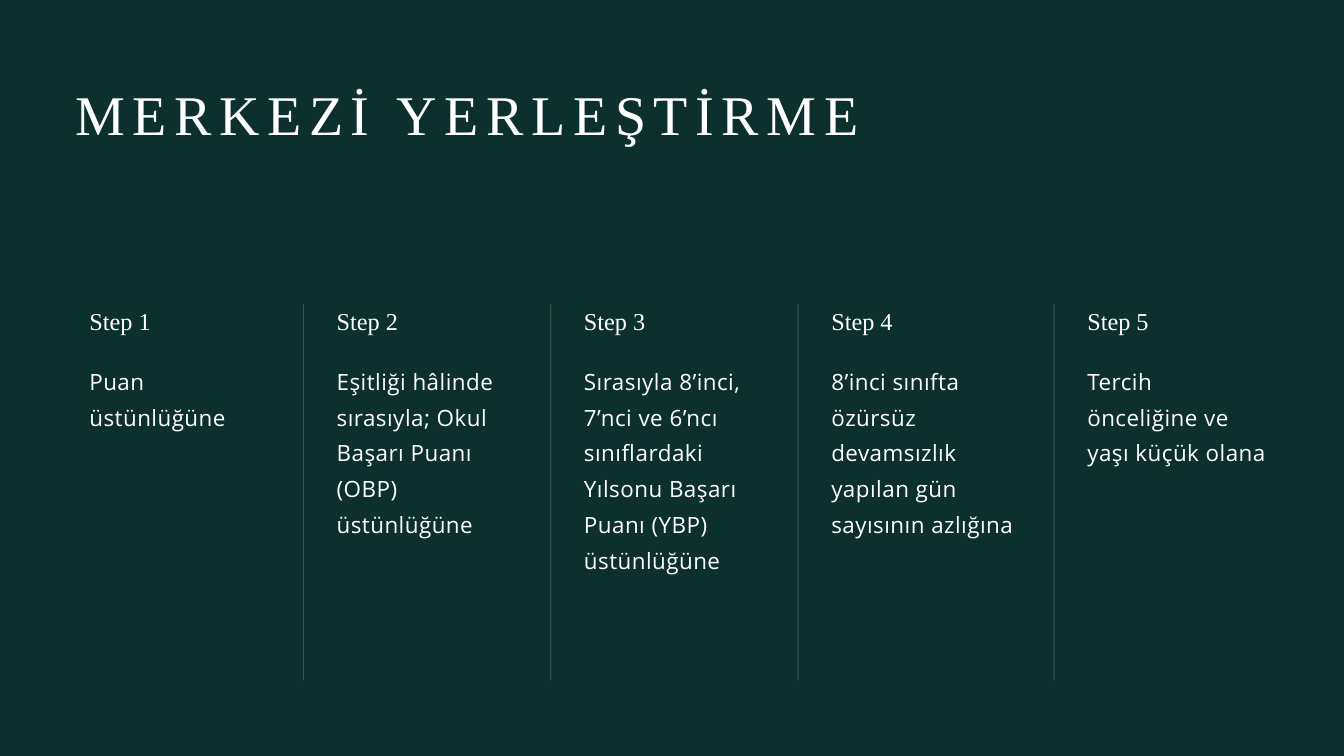
from lxml.etree import SubElement
from pptx import Presentation
from pptx.dml.color import RGBColor
from pptx.enum.shapes import MSO_CONNECTOR as Link
from pptx.enum.text import MSO_ANCHOR as Anchor, MSO_AUTO_SIZE as Fit, PP_ALIGN as Align
from pptx.oxml.ns import qn
from pptx.util import Inches, Pt

TITLE = "MERKEZİ YERLEŞTİRME"
STEPS = [
    ("Step 1", "Puan üstünlüğüne", 2.69, 2),
    ("Step 2", "Eşitliği hâlinde sırasıyla; Okul Başarı Puanı (OBP) üstünlüğüne", 2.69, 5),
    ("Step 3", "Sırasıyla 8’inci, 7’nci ve 6’ncı sınıflardaki Yılsonu Başarı Puanı (YBP) "
               "üstünlüğüne", 2.69, 6),
    ("Step 4", "8’inci sınıfta özürsüz devamsızlık yapılan gün sayısının azlığına", 2.82, 5),
    ("Step 5", "Tercih önceliğine ve yaşı küçük olana", 2.69, 3),
]
WHITE = RGBColor(0xFF, 0xFF, 0xFF)
GREEN = RGBColor(0x0C, 0x30, 0x2E)
SERIF, SANS = "Times New Roman", "Open Sans"
LEFT, GAP = 1.33, 0.99
HEAD, BODY = 4.49, 5.34
TOP, END = 4.53, 10.12
LINE = 0.53


def write(shape, text, box, font=SERIF, size=26, lead=36.4, track=0):
    shape.left, shape.top, shape.width, shape.height = map(Inches, box)
    frame = shape.text_frame
    frame.margin_left = frame.margin_right = frame.margin_top = frame.margin_bottom = 0
    frame.word_wrap = True
    frame.auto_size = Fit.NONE
    frame.vertical_anchor = Anchor.TOP
    para = frame.paragraphs[0]
    para.alignment = Align.LEFT
    para.line_spacing = Pt(lead)
    para.space_before = Pt(0)
    run = para.add_run()
    run.text = text
    run.font.name = font
    run.font.size = Pt(size)
    run.font.color.rgb = WHITE
    if track:
        run.font._element.set("spc", str(round(track * 100)))


def rule(slide, x):
    line = slide.shapes.add_connector(
        Link.STRAIGHT, Inches(x), Inches(END), Inches(x), Inches(TOP))
    line.line.width = Pt(0.75)
    line.line.color.rgb = WHITE
    tint = line._element.spPr.find(".//" + qn("a:srgbClr"))
    SubElement(tint, qn("a:alpha")).set("val", "25000")
    SubElement(line._element.spPr, qn("a:effectLst"))


def main():
    deck = Presentation()
    deck.slide_width, deck.slide_height = Inches(20), Inches(11.25)
    slide = deck.slides.add_slide(deck.slide_layouts[5])
    slide.background.fill.solid()
    slide.background.fill.fore_color.rgb = GREEN
    write(slide.shapes.title, TITLE, (1.12, 0.94, 17.06, 1.19),
          size=60, lead=90, track=8.2)

    x = LEFT
    for step, text, width, lines in STEPS:
        if x > LEFT:
            rule(slide, x - GAP / 2)
        head = slide.shapes.add_textbox(0, 0, 0, 0)
        write(head, step, (x, HEAD, width, 0.47))
        body = slide.shapes.add_textbox(0, 0, 0, 0)
        write(body, text, (x, BODY, width, lines * LINE - 0.07),
              font=SANS, size=24, lead=38.4, track=0.5)
        x += width + GAP
    deck.save("out.pptx")


if __name__ == "__main__":
    main()
